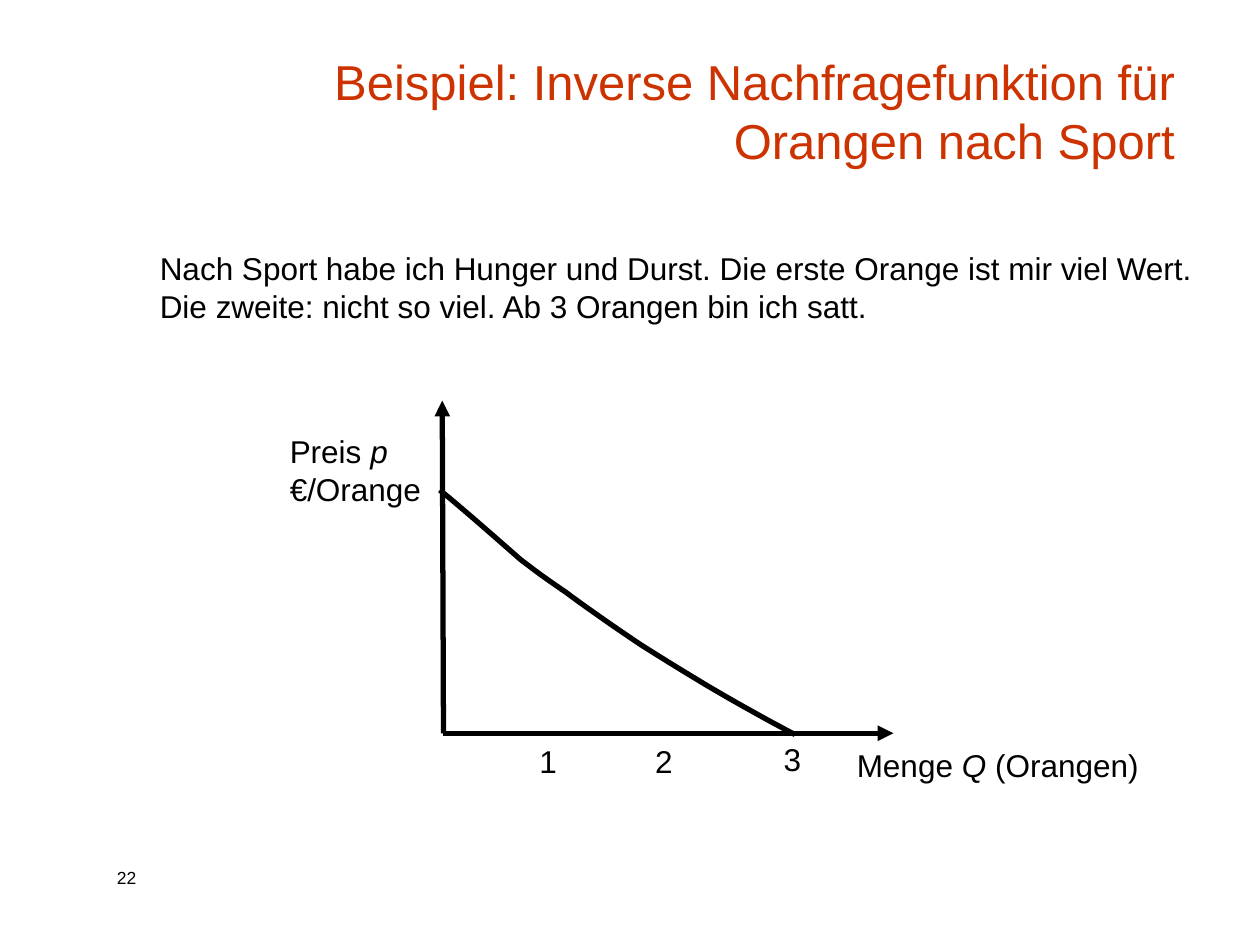
"""Build a slide showing the inverse demand curve for oranges."""
from dataclasses import dataclass

from lxml import etree
from pptx import Presentation
from pptx.dml.color import RGBColor
from pptx.enum.shapes import MSO_CONNECTOR
from pptx.enum.text import MSO_ANCHOR, PP_ALIGN
from pptx.oxml.ns import qn
from pptx.util import Inches, Pt

STRAIGHT = MSO_CONNECTOR.STRAIGHT
TOP, BOTTOM = MSO_ANCHOR.TOP, MSO_ANCHOR.BOTTOM
LEFT, RIGHT = PP_ALIGN.LEFT, PP_ALIGN.RIGHT

COLORS = {"text": "000000", "title": "CC3300", "line": "000000"}
FONT = "Arial"
LINE_WIDTH = Pt(3)
STEPS = 12

Point = tuple[float, float]


@dataclass(frozen=True)
class Label:
    """Text whose lines hold runs; a run starting with * is italic."""
    box: tuple[float, float, float, float]
    lines: tuple[tuple[str, ...], ...]
    size: int = 18
    color: str = "text"
    inset: tuple[float, float] = (0, 0)
    align: PP_ALIGN = LEFT
    anchor: MSO_ANCHOR = TOP


PADDED = (0.1, 0.05)
TICKS = {"1": (4.28, 5.89), "2": (5.2, 5.89), "3": (6.22, 5.87)}
LABELS = [
    Label((0.83, 6.83, 0.67, 0.27), (("22",),), size=10, inset=PADDED),
    Label((1.87, 0.42, 7.55, 0.97),
          (("Beispiel: Inverse Nachfragefunktion für Orangen nach Sport",),),
          size=28, color="title", inset=PADDED, align=RIGHT, anchor=BOTTOM),
    Label((1.17, 1.93, 8.53, 0.71),
          (("Nach Sport habe ich Hunger und Durst. Die erste Orange ist mir viel Wert. "
            "Die zweite: nicht so viel. Ab 3 Orangen bin ich satt.",),), inset=PADDED),
    Label((2.3, 3.43, 1.3, 0.61), (("Preis", "* p"), ("€/Orange",))),
    Label((6.8, 5.92, 2.38, 0.3), (("Menge", "* Q ", "(Orangen)"),)),
    *(Label((*corner, 0.21, 0.3), ((number,),)) for number, corner in TICKS.items()),
]
ORIGIN = (3.52, 5.82)
AXIS_TIPS = [(7.09, 5.82), (3.51, 3.18)]
DEMAND_START = (6.31, 5.83)
DEMAND_BEZIERS = [
    ((6.19, 5.77), (5.81, 5.56), (5.61, 5.44)),
    ((5.41, 5.32), (5.28, 5.24), (5.09, 5.12)),
    ((4.91, 5.0), (4.65, 4.82), (4.49, 4.7)),
    ((4.33, 4.59), (4.3, 4.57), (4.13, 4.44)),
    ((3.97, 4.3), (3.63, 4.0), (3.49, 3.89)),
]


def draw_label(slide, label: Label) -> None:
    """Add one text box."""
    frame = slide.shapes.add_textbox(*map(Inches, label.box)).text_frame
    frame.word_wrap = True
    frame.vertical_anchor = label.anchor
    frame.margin_left = frame.margin_right = Inches(label.inset[0])
    frame.margin_top = frame.margin_bottom = Inches(label.inset[1])
    for index, line in enumerate(label.lines):
        paragraph = frame.add_paragraph() if index else frame.paragraphs[0]
        paragraph.alignment = label.align
        paragraph.font.name = FONT
        paragraph.font.size = Pt(label.size)
        paragraph.font.color.rgb = RGBColor.from_string(COLORS[label.color])
        for text in line:
            run = paragraph.add_run()
            run.text = text.removeprefix("*")
            if text.startswith("*"):
                run.font.italic = True


def style_line(line) -> None:
    """Give axes and curve the same stroke."""
    line.width = LINE_WIDTH
    line.color.rgb = RGBColor.from_string(COLORS["line"])


def draw_axis(slide, tip: Point) -> None:
    """Add an arrow from the origin to the tip."""
    axis = slide.shapes.add_connector(STRAIGHT, *map(Inches, ORIGIN + tip))
    style_line(axis.line)
    etree.SubElement(axis.line._get_or_add_ln(), qn("a:tailEnd"), type="triangle")
    etree.SubElement(axis._element.spPr, qn("a:effectLst"))


def bezier_points(start: Point, bezier: tuple[Point, Point, Point]) -> list[Point]:
    """Sample a cubic Bézier curve, leaving out its start."""
    points = []
    for step in range(1, STEPS + 1):
        t = step / STEPS
        weights = ((1 - t) ** 3, 3 * t * (1 - t) ** 2, 3 * t ** 2 * (1 - t), t ** 3)
        x, y = (sum(w * v for w, v in zip(weights, values))
                for values in zip(start, *bezier))
        points.append((x, y))
    return points


def draw_demand(slide) -> None:
    """Add the demand curve as an open outline."""
    points, start = [], DEMAND_START
    for bezier in DEMAND_BEZIERS:
        points += bezier_points(start, bezier)
        start = bezier[-1]
    builder = slide.shapes.build_freeform(*map(Inches, DEMAND_START))
    builder.add_line_segments([(Inches(x), Inches(y)) for x, y in points], close=False)
    curve = builder.convert_to_shape()
    curve.shadow.inherit = False
    curve.fill.background()
    style_line(curve.line)


def main() -> None:
    """Build and save the slide."""
    deck = Presentation()
    deck.slide_width, deck.slide_height = Inches(10), Inches(7.5)
    slide = deck.slides.add_slide(deck.slide_layouts[6])
    for tip in AXIS_TIPS:
        draw_axis(slide, tip)
    draw_demand(slide)
    for label in LABELS:
        draw_label(slide, label)
    deck.save("out.pptx")


if __name__ == "__main__":
    main()
